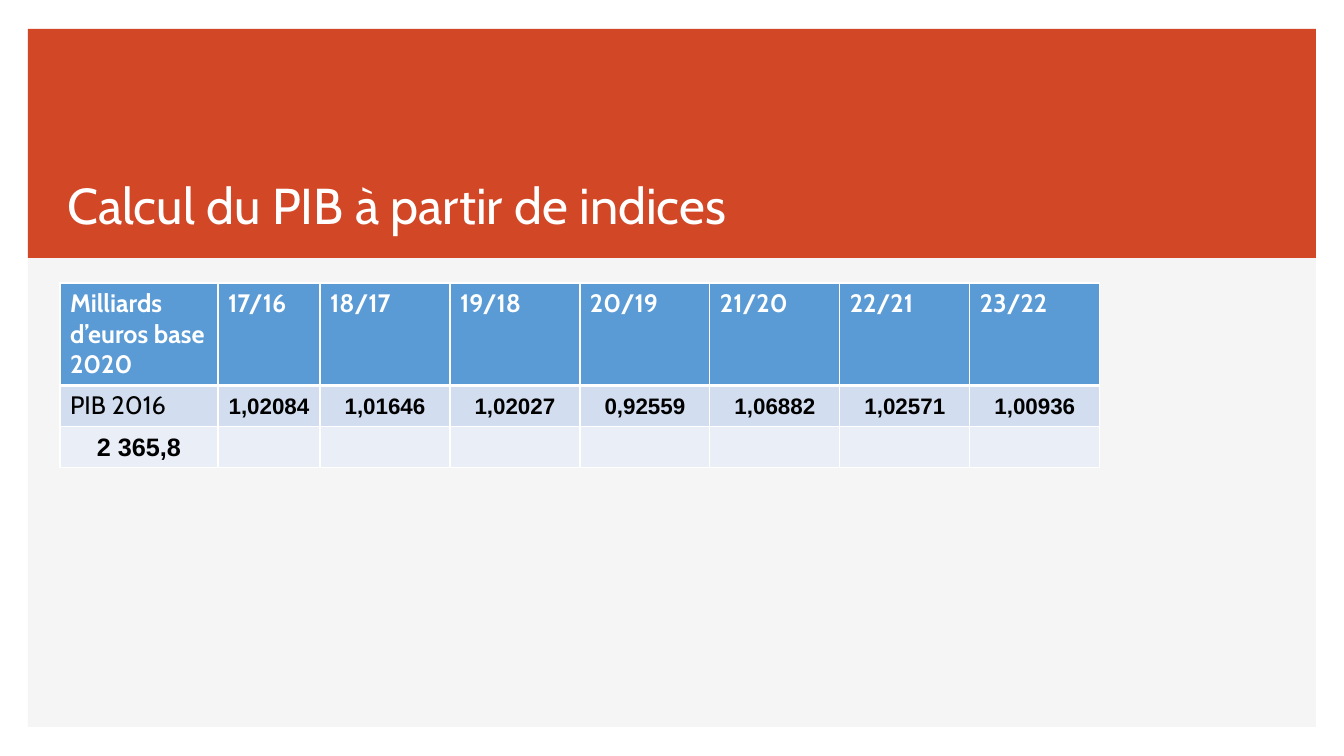
from lxml import etree
from pptx import Presentation
from pptx import util as u
from pptx.dml.color import RGBColor
from pptx.enum import shapes, text
from pptx.oxml import ns

PX = 914400 / 100.8
COLORS = {
    "white": "FFFFFF", "black": "000000", "panel": "F5F5F5", "banner": "D24726",
    "header": "5B9BD5", "band": "D2DEEF", "light": "EAEFF7",
}
HEADERS = ["Milliards d’euros base 2020", "17/16", "18/17", "19/18",
           "20/19", "21/20", "22/21", "23/22"]
INDICES = ["1,02084", "1,01646", "1,02027", "0,92559", "1,06882", "1,02571", "1,00936"]
ROWS = [HEADERS, ["PIB 2016"] + INDICES, ["2 365,8"] + [""] * 7]
COLUMN_WIDTHS = [158, 102] + [130] * 6
ROW_HEIGHTS = [102, 41, 41]
ROW_FILLS = ["header", "band", "light"]

LABEL = {"name": "Cabin", "size": u.Pt(18), "bold": False}
HEADING = {**LABEL, "bold": True}
INDEX = {"name": "Arial", "size": u.Pt(16), "bold": True}
AMOUNT = {**INDEX, "size": u.Pt(18)}
TITLE = {"name": "Cabin", "size": u.Pt(36), "bold": False}
NUMBER_CELL = {
    "vertical_anchor": text.MSO_ANCHOR.MIDDLE,
    "margin_left": u.Inches(0.01), "margin_right": u.Inches(0.01),
    "margin_top": u.Inches(0.01), "margin_bottom": 0,
}


def px(n):
    return u.Emu(round(n * PX))


def rgb(name):
    return RGBColor.from_string(COLORS[name])


def set_attributes(obj, values):
    for key, value in values.items():
        setattr(obj, key, value)


def write(p, words, font, color, align):
    p.alignment = align
    r = p.add_run()
    r.text = words
    set_attributes(r.font, font)
    r.font.color.rgb = rgb(color)


def add_panel(s, box, color):
    sp = s.shapes.add_shape(shapes.MSO_SHAPE.RECTANGLE, *map(px, box))
    sp.shadow.inherit = False
    sp.fill.solid()
    sp.fill.fore_color.rgb = rgb(color)
    sp.line.fill.background()


def add_banner(s, box):
    left, top, width, height = box
    add_panel(s, box, "banner")
    sp = s.shapes.title
    sp.element.getparent().append(sp.element)
    set_attributes(sp, {"left": px(left + 29), "top": px(top + 140),
                        "width": px(758), "height": px(71)})
    tf = sp.text_frame
    set_attributes(tf, {"word_wrap": True, "auto_size": text.MSO_AUTO_SIZE.NONE,
                        "vertical_anchor": text.MSO_ANCHOR.BOTTOM})
    write(tf.paragraphs[0], "Calcul du PIB à partir de indices", TITLE, "white",
          text.PP_ALIGN.LEFT)


def set_borders(cell, points):
    tc_pr = cell._tc.get_or_add_tcPr()
    for i, (side, width) in enumerate(points.items()):
        ln = etree.Element(ns.qn(f"a:ln{side}"), w=str(u.Pt(width)))
        fill = etree.SubElement(ln, ns.qn("a:solidFill"))
        etree.SubElement(fill, ns.qn("a:srgbClr"), val=COLORS["white"])
        tc_pr.insert(i, ln)


def cell_font(row, column):
    if row == 0:
        return HEADING
    if row == 2:
        return AMOUNT
    return INDEX if column else LABEL


def add_gdp_table(s, left, top):
    frame = s.shapes.add_table(len(ROWS), len(HEADERS), px(left), px(top),
                               px(sum(COLUMN_WIDTHS)), px(sum(ROW_HEIGHTS)))
    table = frame.table
    for column, width in zip(table.columns, COLUMN_WIDTHS):
        column.width = px(width)
    for i, values in enumerate(ROWS):
        table.rows[i].height = px(ROW_HEIGHTS[i])
        for j, value in enumerate(values):
            cell = table.cell(i, j)
            cell.fill.solid()
            cell.fill.fore_color.rgb = rgb(ROW_FILLS[i])
            set_borders(cell, {"L": 1, "R": 1, "T": 3 if i == 1 else 1,
                               "B": 3 if i == 0 else 1})
            if not value:
                continue
            font = cell_font(i, j)
            numeric = font["name"] == "Arial"
            if numeric:
                set_attributes(cell, NUMBER_CELL)
            write(cell.text_frame.paragraphs[0], value, font,
                  "black" if i else "white",
                  text.PP_ALIGN.CENTER if numeric else text.PP_ALIGN.LEFT)


def build_slide(prs):
    s = prs.slides.add_slide(prs.slide_layouts[5])
    add_panel(s, (28, 29, 1288, 698), "panel")
    add_banner(s, (28, 29, 1288, 229))
    add_gdp_table(s, 60, 283)


def main():
    prs = Presentation()
    set_attributes(prs, {"slide_width": px(1344), "slide_height": px(756)})
    build_slide(prs)
    prs.save("out.pptx")


if __name__ == "__main__":
    main()
